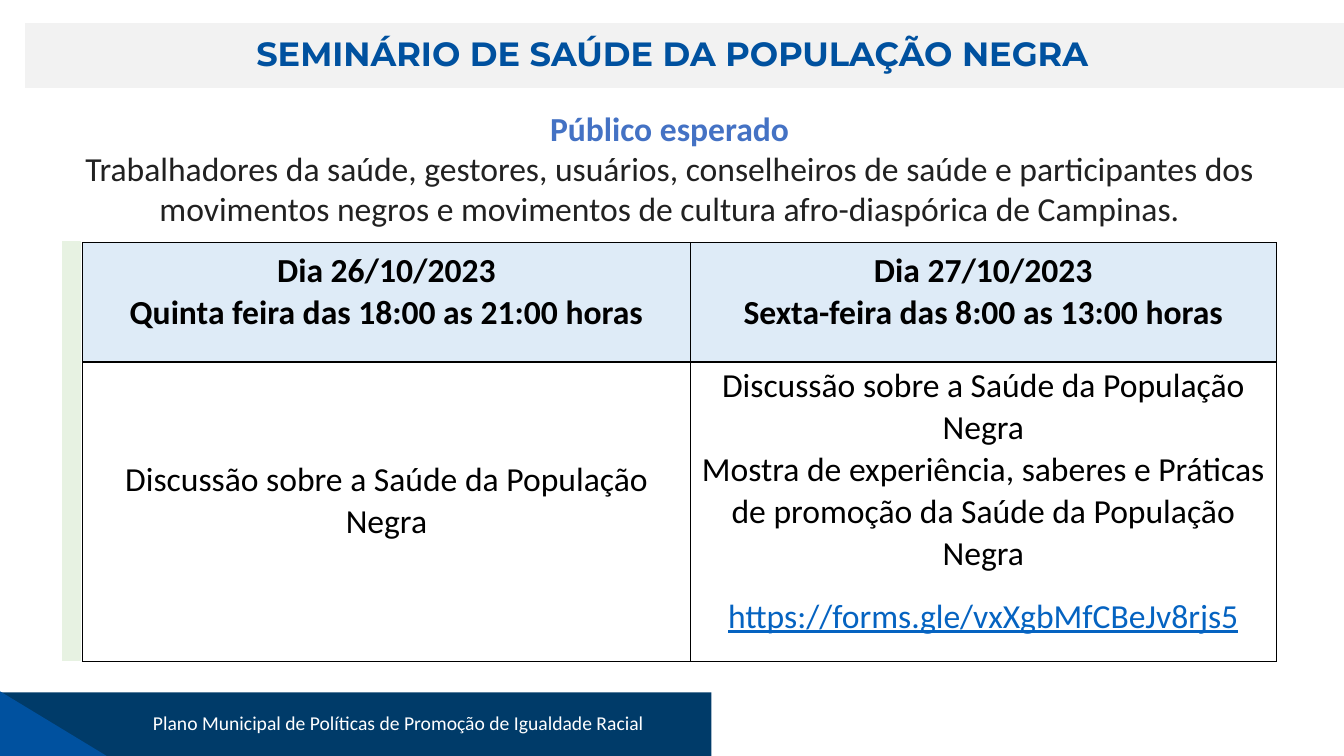
from dataclasses import dataclass

from lxml.etree import SubElement as Sub
from pptx import Presentation
from pptx.dml.color import RGBColor as Rgb
from pptx.enum.shapes import MSO_SHAPE as Geo
from pptx.enum.text import MSO_ANCHOR as Anchor, PP_ALIGN as Align
from pptx.oxml.ns import qn
from pptx.util import Cm, Pt


@dataclass(frozen=True)
class Theme:
    head: str = "Montserrat"
    body: str = "Calibri"
    large: int = 24
    small: int = 14
    lead: int = 30
    white: str = "FFFFFF"
    black: str = "000000"
    ink: str = "212121"
    blue: str = "00519F"
    navy: str = "003B69"
    accent: str = "4472C4"
    link: str = "0563C1"
    gray: str = "F2F2F2"
    green: str = "E7F2E2"
    pale: str = "DEEBF7"


class Deck:
    def __init__(self, theme):
        self.theme = theme
        self.prs = Presentation()
        self.prs.slide_width, self.prs.slide_height = Cm(33.87), Cm(19.05)
        self.slide = self.prs.slides.add_slide(self.prs.slide_layouts[5])
        self.shapes = self.slide.shapes

    def run(self, para, text, color, size=None, bold=False, font=None, under=False):
        run = para.add_run()
        run.text = text
        style = run.font
        style.name = font or self.theme.body
        style.size = Pt(size or self.theme.large)
        style.bold = bold
        style.underline = under
        style.color.rgb = Rgb.from_string(color)

    def block(self, geo, box, color):
        shape = self.shapes.add_shape(geo, *map(Cm, box))
        shape.shadow.inherit = False
        shape.fill.solid()
        shape.fill.fore_color.rgb = Rgb.from_string(color)
        shape.line.fill.background()

    def fill(self, frame, lines, lead=None):
        """Each line is a dict of run settings, with an optional gap before."""
        frame.word_wrap = True
        frame.vertical_anchor = Anchor.MIDDLE
        for i, line in enumerate(lines):
            para = frame.add_paragraph() if i else frame.paragraphs[0]
            para.alignment = Align.CENTER
            para.space_before = Pt(line.get("gap", 0))
            para.line_spacing = Pt(lead) if lead else 1.0
            self.run(para, **{k: v for k, v in line.items() if k != "gap"})

    def title(self, box, text):
        title = self.shapes.title
        title.left, title.top, title.width, title.height = map(Cm, box)
        self.fill(title.text_frame, [dict(
            text=text, color=self.theme.blue, bold=True, font=self.theme.head)])
        title.element.getparent().append(title.element)

    def text(self, box, lines):
        shape = self.shapes.add_textbox(*map(Cm, box))
        self.fill(shape.text_frame, lines)

    def edge(self, cell):
        props = cell._tc.get_or_add_tcPr()
        for i, side in enumerate(("lnL", "lnR", "lnT", "lnB")):
            line = props.makeelement(qn(f"a:{side}"), {"w": str(Pt(1))})
            solid = Sub(line, qn("a:solidFill"))
            Sub(solid, qn("a:srgbClr"), val=self.theme.black)
            props.insert(i, line)

    def table(self, spot, cols, rows, cells):
        size = sum(cols), sum(rows)
        grid = self.shapes.add_table(
            len(rows), len(cols), *map(Cm, (*spot, *size))).table
        grid.first_row = grid.horz_banding = False
        for col, width in zip(grid.columns, cols):
            col.width = Cm(width)
        for r, (height, row) in enumerate(zip(rows, cells)):
            grid.rows[r].height = Cm(height)
            for c, lines in enumerate(row):
                cell = grid.cell(r, c)
                cell.margin_left = cell.margin_right = Cm(0.18)
                cell.margin_top, cell.margin_bottom = Cm(0), Cm(0.53)
                cell.vertical_anchor = Anchor.MIDDLE
                if r:
                    cell.fill.background()
                else:
                    cell.fill.solid()
                    cell.fill.fore_color.rgb = Rgb.from_string(self.theme.pale)
                self.fill(cell.text_frame, lines, self.theme.lead)
                self.edge(cell)

    def save(self):
        self.prs.save("out.pptx")


def main():
    look = Theme()
    deck = Deck(look)

    # Footer
    deck.block(Geo.RECTANGLE, (0, 17.45, 17.93, 1.6), look.navy)
    deck.block(Geo.RIGHT_TRIANGLE, (0, 17.42, 2.69, 1.63), look.blue)
    deck.text((2.26, 17.4, 15.57, 1.63), [dict(
        text="Plano Municipal de Políticas de Promoção de Igualdade Racial",
        color=look.white, size=look.small)])

    # Title band
    deck.block(Geo.FLOWCHART_PROCESS, (0.64, 0.58, 33.23, 1.63), look.gray)
    deck.title((0.66, 0.69, 32.56, 1.27), "SEMINÁRIO DE SAÚDE DA POPULAÇÃO NEGRA")

    # Audience
    deck.text((1.7, 2.57, 30.35, 3.33), [
        dict(text="Público esperado", color=look.accent, bold=True),
        dict(text="Trabalhadores da saúde, gestores, usuários, conselheiros de "
                  "saúde e participantes dos movimentos negros e movimentos de "
                  "cultura afro-diaspórica de Campinas.", color=look.ink)])

    # Schedule
    deck.block(Geo.FLOWCHART_PROCESS, (1.57, 6.07, 0.48, 10.59), look.green)
    days = [("Dia 26/10/2023", "Quinta feira das 18:00 as 21:00 horas"),
            ("Dia 27/10/2023", "Sexta-feira das 8:00 as 13:00 horas")]
    heads = [[dict(text=t, color=look.black, bold=True) for t in day] for day in days]
    talk = dict(text="Discussão sobre a Saúde da População Negra", color=look.black)
    show = dict(text="Mostra de experiência, saberes e Práticas de promoção da "
                     "Saúde da População Negra", color=look.black)
    form = dict(text="https://forms.gle/vxXgbMfCBeJv8rjs5", color=look.link,
                under=True, gap=look.lead / 2)
    deck.table((2.08, 6.12), (15.32, 14.76), (3, 7.54),
               [heads, [[talk], [talk, show, form]]])

    deck.save()


if __name__ == "__main__":
    main()
